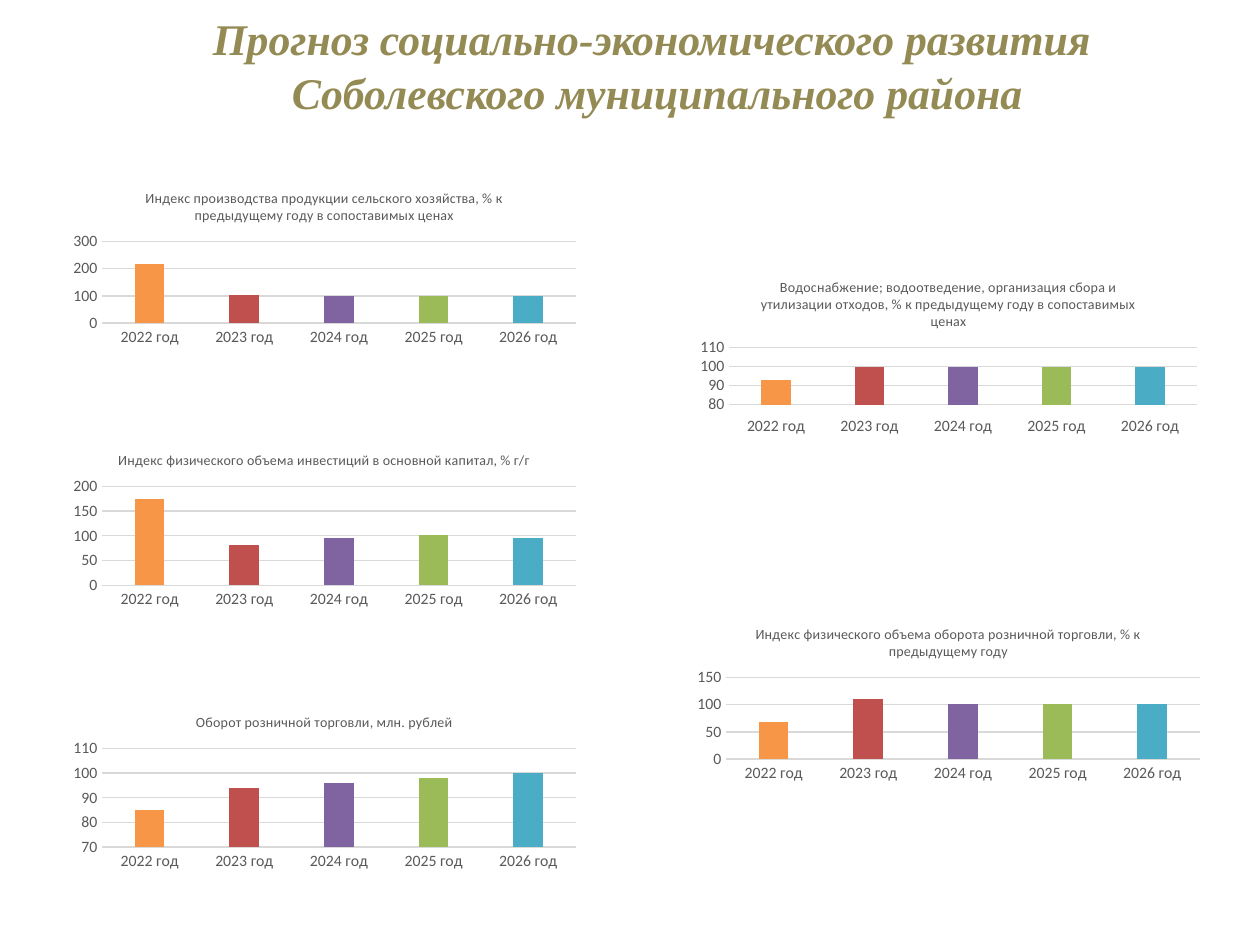
from pptx import Presentation
from pptx.chart.data import CategoryChartData
from pptx.dml.color import RGBColor
from pptx.enum.chart import XL_CHART_TYPE, XL_TICK_LABEL_POSITION, XL_TICK_MARK
from pptx.enum.text import MSO_ANCHOR, MSO_AUTO_SIZE, PP_ALIGN
from pptx.util import Emu, Pt

EMU_PER_PX = 914400 / 126
COLORS = {
    "heading": "948A54",
    "label": "595959",
    "grid": "D9D9D9",
    "series": "4F81BD",
    "2022": "F79646",
    "2023": "C0504D",
    "2024": "8064A2",
    "2025": "9BBB59",
    "2026": "4BACC6",
}
YEARS = ["2022", "2023", "2024", "2025", "2026"]
HEADING = [
    "Прогноз социально-экономического развития ",
    "Соболевского муниципального района",
]
LEFT_COLUMN, RIGHT_COLUMN = 63, 687
CHART_WIDTH, CHART_HEIGHT = 523, 174

# Indicator, left, top, width, values, (axis minimum, maximum, step)
INDICATORS = [
    ("Индекс производства продукции сельского хозяйства, % к предыдущему году "
     "в сопоставимых ценах",
     LEFT_COLUMN, 176, CHART_WIDTH, [216, 104, 100, 100, 100], (0, 300, 100)),
    ("Индекс физического объема оборота розничной торговли, % к предыдущему году",
     RIGHT_COLUMN, 612, CHART_WIDTH, [68, 111, 102, 102, 102], (0, 150, 50)),
    ("Водоснабжение; водоотведение, организация сбора и утилизации отходов, "
     "% к предыдущему году в сопоставимых ценах",
     690, 265, 517, [93, 100, 100, 100, 100], (80, 110, 10)),
    ("Индекс физического объема инвестиций в основной капитал, % г/г",
     LEFT_COLUMN, 438, CHART_WIDTH, [174, 82, 96, 101, 95], (0, 200, 50)),
    ("Оборот розничной торговли, млн. рублей",
     LEFT_COLUMN, 700, CHART_WIDTH, [85, 94, 96, 98, 100], (70, 110, 10)),
]


def px(length):
    return Emu(round(length * EMU_PER_PX))


def rgb(name):
    return RGBColor.from_string(COLORS[name])


def format_font(font, size, color, name="Calibri", bold=False, italic=False):
    font.size = Pt(size)
    font.color.rgb = rgb(color)
    font.name = name
    font.bold = bold
    font.italic = italic


def write_text(frame, lines, align=PP_ALIGN.CENTER, indent=0, gap=0, **font_format):
    """Write one paragraph per line, with gap points between paragraphs."""
    for number, line in enumerate(lines):
        paragraph = frame.add_paragraph() if number else frame.paragraphs[0]
        paragraph.alignment = align
        if indent:
            properties = paragraph._p.get_or_add_pPr()
            properties.set("marL", str(px(indent)))
            properties.set("indent", "0")
        if number and gap:
            paragraph.space_before = Pt(gap)
        run = paragraph.add_run()
        run.text = line
        format_font(run.font, **font_format)


def add_heading(slide):
    heading = slide.shapes.title
    heading.left, heading.top = px(-64), px(26)
    heading.width, heading.height = px(1344), px(78)
    frame = heading.text_frame
    frame.word_wrap = True
    frame.auto_size = MSO_AUTO_SIZE.NONE
    frame.vertical_anchor = MSO_ANCHOR.MIDDLE
    write_text(frame, HEADING, indent=98, gap=1, size=25, color="heading",
               name="Times New Roman", bold=True, italic=True)


def format_line(line):
    line.color.rgb = rgb("grid")
    line.width = Pt(0.75)


def format_axes(chart, minimum, maximum, step):
    years, scale = chart.category_axis, chart.value_axis
    for axis in (years, scale):
        axis.major_tick_mark = axis.minor_tick_mark = XL_TICK_MARK.NONE
        format_font(axis.tick_labels.font, 9, "label")
    format_line(years.format.line)
    years.has_major_gridlines = False
    if minimum == 80:
        years.tick_label_position = XL_TICK_LABEL_POSITION.LOW
    scale.minimum_scale, scale.maximum_scale = minimum, maximum
    scale.major_unit = step
    scale.format.line.fill.background()
    scale.has_major_gridlines = True
    format_line(scale.major_gridlines.format.line)


def add_indicator(slide, indicator, left, top, width, values, limits):
    data = CategoryChartData()
    data.categories = [f"{year} год" for year in YEARS]
    data.add_series(indicator, values)
    chart = slide.shapes.add_chart(
        XL_CHART_TYPE.COLUMN_CLUSTERED,
        px(left), px(top), px(width), px(CHART_HEIGHT), data).chart
    chart.font.size = Pt(10)
    chart.font.name = "Calibri"
    chart.has_legend = False
    chart.has_title = True
    chart.chart_title.include_in_layout = False
    write_text(chart.chart_title.text_frame, [indicator], size=8, color="label")
    format_axes(chart, *limits)

    columns = chart.plots[0]
    columns.gap_width = 219
    columns.vary_by_categories = False
    series = columns.series[0]
    series.invert_if_negative = False
    series.format.fill.solid()
    series.format.fill.fore_color.rgb = rgb("series")
    for position, year in enumerate(YEARS):
        fill = series.points[position].format.fill
        fill.solid()
        fill.fore_color.rgb = rgb(year)


def main():
    presentation = Presentation()
    presentation.slide_width, presentation.slide_height = px(1260), px(945)
    slide = presentation.slides.add_slide(presentation.slide_layouts[5])
    add_heading(slide)
    for indicator in INDICATORS:
        add_indicator(slide, *indicator)
    presentation.save("out.pptx")


if __name__ == "__main__":
    main()
